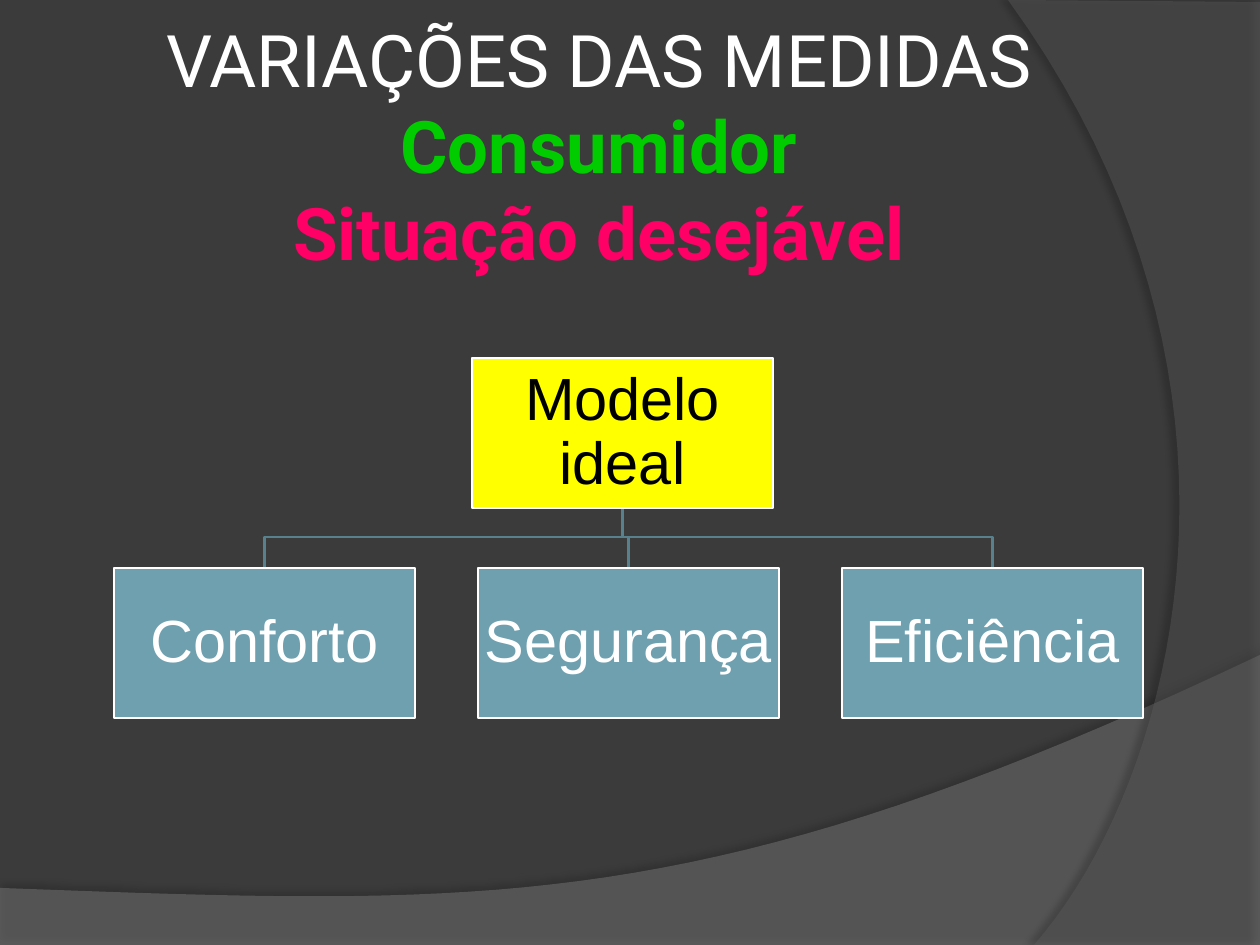
import pptx
import pptx.dml.color
import pptx.enum.shapes
import pptx.enum.text
import pptx.oxml
import pptx.oxml.ns
import pptx.util

RGBColor = pptx.dml.color.RGBColor
BACKGROUND = RGBColor(0x3B, 0x3B, 0x3B)
LOWER_WAVE = RGBColor(0x7F, 0x7F, 0x7F)
RIGHT_WAVE = RGBColor(0x5E, 0x5E, 0x5E)
WHITE = RGBColor(0xFF, 0xFF, 0xFF)
BLACK = RGBColor(0x00, 0x00, 0x00)
GREEN = RGBColor(0x00, 0xCC, 0x00)
PINK = RGBColor(0xFF, 0x00, 0x66)
YELLOW = RGBColor(0xFF, 0xFF, 0x00)
TEAL = RGBColor(0x6E, 0xA0, 0xB0)
BRANCH = RGBColor(0x58, 0x80, 0x8D)

PAGE_WIDTH, PAGE_HEIGHT = 1260, 945
EMU_PER_PX = 914400 / 126
BOX_WIDTH, BOX_HEIGHT = 301, 150


def emu(px):
    return pptx.util.Emu(round(px * EMU_PER_PX))


def bezier(start, first, second, end, steps=40):
    points = []
    for step in range(steps + 1):
        t = step / steps
        weights = ((1 - t) ** 3, 3 * t * (1 - t) ** 2, 3 * t * t * (1 - t), t ** 3)
        corners = (start, first, second, end)
        points.append(tuple(sum(w * c[axis] for w, c in zip(weights, corners)) for axis in (0, 1)))
    return points


class SlideBuilder:
    title_font = "Roboto"
    title_size = pptx.util.Pt(41.4)
    box_font = "Arial"
    box_size = pptx.util.Pt(34)
    line_width = pptx.util.Pt(1.5)

    def __init__(self, page):
        self.page = page
        page.background.fill.solid()
        page.background.fill.fore_color.rgb = BACKGROUND

    def outline(self, points, close):
        start, *rest = [(emu(x), emu(y)) for x, y in points]
        builder = self.page.shapes.build_freeform(*start, scale=1.0)
        builder.add_line_segments(rest, close=close)
        shape = builder.convert_to_shape()
        shape.shadow.inherit = False
        return shape

    def wave(self, points, color, opacity, shadow_opacity, distance, direction):
        shape = self.outline(points, True)
        shape.fill.solid()
        shape.fill.fore_color.rgb = color
        shape.line.fill.background()
        properties = shape._element.spPr
        tint = properties.find(".//" + pptx.oxml.ns.qn("a:srgbClr"))
        tint.append(pptx.oxml.parse_xml(
            f'<a:alpha {pptx.oxml.ns.nsdecls("a")} val="{opacity * 1000}"/>'))
        properties.find(pptx.oxml.ns.qn("a:effectLst")).append(pptx.oxml.parse_xml(
            f'<a:outerShdw {pptx.oxml.ns.nsdecls("a")} blurRad="{pptx.util.Pt(4)}" '
            f'dist="{pptx.util.Pt(distance)}" dir="{direction * 60000}" algn="ctr" rotWithShape="0">'
            f'<a:srgbClr val="000000"><a:alpha val="{shadow_opacity * 1000}"/></a:srgbClr>'
            '</a:outerShdw>'))

    def branch(self, points):
        shape = self.outline(points, False)
        shape.fill.background()
        shape.line.color.rgb = BRANCH
        shape.line.width = self.line_width

    def frame(self, shape, inset):
        frame = shape.text_frame
        frame.word_wrap = True
        frame.auto_size = pptx.enum.text.MSO_AUTO_SIZE.NONE
        frame.vertical_anchor = pptx.enum.text.MSO_ANCHOR.MIDDLE
        frame.margin_left = frame.margin_right = emu(inset)
        frame.margin_top = frame.margin_bottom = emu(inset)
        para = frame.paragraphs[0]
        para.alignment = pptx.enum.text.PP_ALIGN.CENTER
        return para

    def title(self, left, top, width, height, lines):
        title = self.page.shapes.title
        title.left, title.top, title.width, title.height = map(emu, (left, top, width, height))
        self.page.shapes._spTree.append(title._element)
        para = self.frame(title, 6)
        para.font.name = self.title_font
        para.font.size = self.title_size
        for number, (text, color, bold) in enumerate(lines):
            if number:
                para.add_line_break()
            span = para.add_run()
            span.text = text
            span.font.color.rgb = color
            span.font.bold = bold

    def box(self, left, top, text, fill, color):
        box = self.page.shapes.add_shape(
            pptx.enum.shapes.MSO_SHAPE.RECTANGLE,
            emu(left), emu(top), emu(BOX_WIDTH), emu(BOX_HEIGHT))
        box.shadow.inherit = False
        box.fill.solid()
        box.fill.fore_color.rgb = fill
        box.line.color.rgb = WHITE
        box.line.width = self.line_width
        para = self.frame(box, 2)
        para.text = text
        para.line_spacing = 0.9
        para.font.name = self.box_font
        para.font.size = self.box_size
        para.font.color.rgb = color


def main():
    deck = pptx.Presentation()
    deck.slide_width, deck.slide_height = emu(PAGE_WIDTH), emu(PAGE_HEIGHT)
    slide = SlideBuilder(deck.slides.add_slide(deck.slide_layouts[5]))

    lower_edge = bezier((1260, 655), (704, 919), (493, 906), (0, 888))
    slide.wave([(0, 945), (1260, 945)] + lower_edge, LOWER_WAVE, 45, 35, 3.5, 270)
    right_edge = bezier((1034, 945), (1178, 780), (1283, 378), (1008, 0))
    slide.wave([(1260, 2), (1260, 945)] + right_edge, RIGHT_WAVE, 40, 45, 4, 180)

    slide.title(84, 66, 1030, 158, [
        ("VARIAÇÕES DAS MEDIDAS", WHITE, False),
        ("Consumidor", GREEN, True),
        ("Situação desejável", PINK, True),
    ])

    root_left, root_top = 472, 358
    child_left, child_top, child_step = 114, 568, 364
    bus_y = 537
    root_x = root_left + BOX_WIDTH / 2
    children = [(child_left + index * child_step, text)
                for index, text in enumerate(("Conforto", "Segurança", "Eficiência"))]
    for left, _ in children:
        child_x = left + BOX_WIDTH / 2
        slide.branch([(root_x, root_top + BOX_HEIGHT), (root_x, bus_y),
                      (child_x, bus_y), (child_x, child_top)])
    slide.box(root_left, root_top, "Modelo ideal", YELLOW, BLACK)
    for left, text in children:
        slide.box(left, child_top, text, TEAL, WHITE)

    deck.save("out.pptx")


if __name__ == "__main__":
    main()
